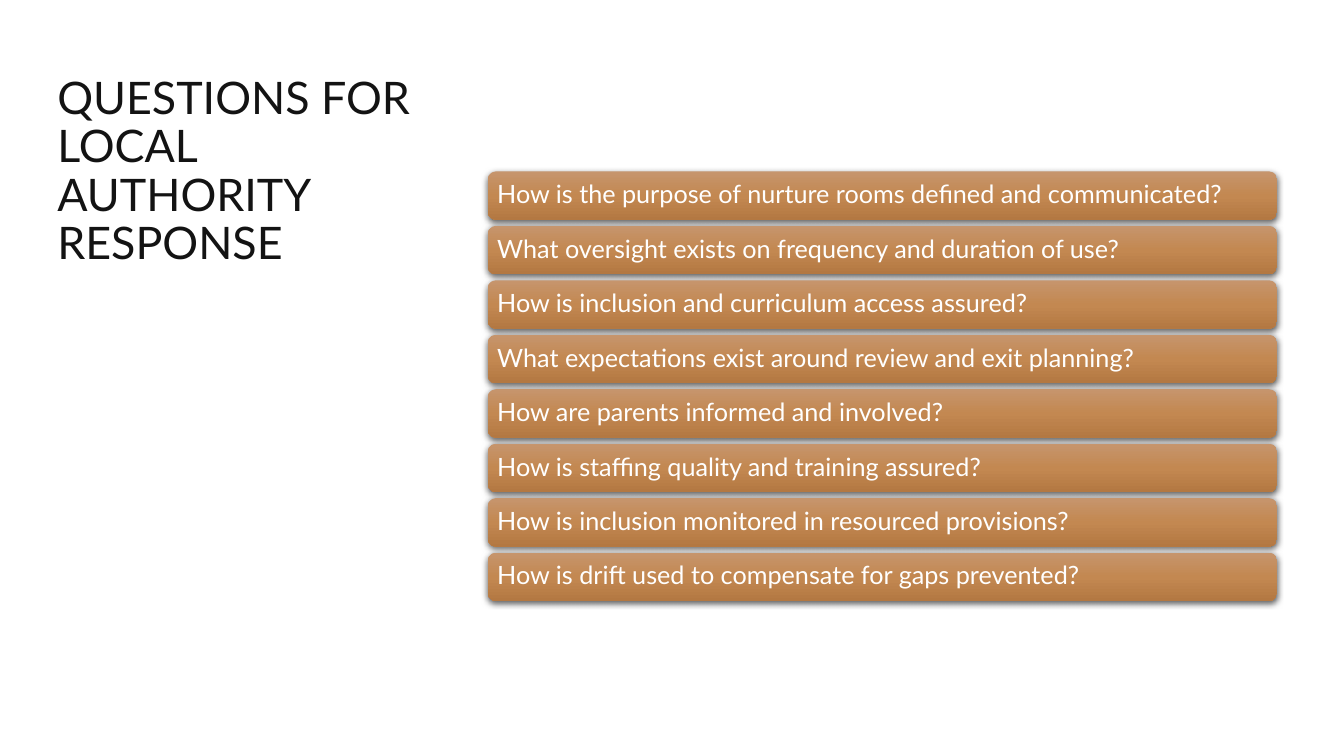
"""Build a slide listing questions for the local authority response."""
from dataclasses import dataclass

from lxml import etree
from pptx import Presentation
from pptx.dml.color import RGBColor
from pptx.enum.shapes import MSO_SHAPE
from pptx.enum.text import MSO_ANCHOR, PP_ALIGN
from pptx.oxml import parse_xml
from pptx.oxml.ns import nsdecls
from pptx.shapes.autoshape import Shape
from pptx.slide import Slide
from pptx.util import Pt

ROUNDED = MSO_SHAPE.ROUNDED_RECTANGLE
TOP, MIDDLE = MSO_ANCHOR.TOP, MSO_ANCHOR.MIDDLE
LEFT = PP_ALIGN.LEFT
FONT = "Lato"
TITLE = "QUESTIONS FOR LOCAL AUTHORITY RESPONSE"
QUESTIONS = (
    "How is the purpose of nurture rooms defined and communicated?",
    "What oversight exists on frequency and duration of use?",
    "How is inclusion and curriculum access assured?",
    "What expectations exist around review and exit planning?",
    "How are parents informed and involved?",
    "How is staffing quality and training assured?",
    "How is inclusion monitored in resourced provisions?",
    "How is drift used to compensate for gaps prevented?",
)
GRADIENT = ((0, "C6956D"), (50, "C38851"), (100, "B37842"))
BAR_TOP, BAR_PITCH = 122.4, 38.9


@dataclass(frozen=True)
class Box:
    left: float
    top: float
    width: float
    height: float

    def lengths(self) -> tuple[Pt, Pt, Pt, Pt]:
        return Pt(self.left), Pt(self.top), Pt(self.width), Pt(self.height)


@dataclass(frozen=True)
class TextStyle:
    size: float
    color: str
    anchor: MSO_ANCHOR
    inset_x: float
    inset_y: float


TITLE_STYLE = TextStyle(32, "131313", TOP, 7.2, 3.6)
BAR_STYLE = TextStyle(18, "FFFFFF", MIDDLE, 5.04, 5.04)


def rgb(color: str) -> RGBColor:
    return RGBColor.from_string(color)


def write(sp: Shape, text: str, style: TextStyle) -> None:
    tf = sp.text_frame
    tf.word_wrap = True
    tf.vertical_anchor = style.anchor
    tf.margin_left = tf.margin_right = Pt(style.inset_x)
    tf.margin_top = tf.margin_bottom = Pt(style.inset_y)
    p = tf.paragraphs[0]
    p.text = text
    p.alignment = LEFT
    p.line_spacing = 0.9
    p.font.name = FONT
    p.font.size = Pt(style.size)
    p.font.color.rgb = rgb(style.color)


def gradient_fill() -> etree.ElementBase:
    stops = "".join(
        f'<a:gs pos="{pos * 1000}"><a:srgbClr val="{color}"/></a:gs>'
        for pos, color in GRADIENT
    )
    return parse_xml(
        f'<a:gradFill {nsdecls("a")} rotWithShape="1"><a:gsLst>{stops}</a:gsLst>'
        '<a:lin ang="5400000" scaled="0"/></a:gradFill>'
    )


def drop_shadow() -> etree.ElementBase:
    return parse_xml(
        f'<a:effectLst {nsdecls("a")}><a:outerShdw blurRad="{Pt(4.5)}" '
        f'dist="{Pt(1.5)}" dir="5400000" algn="ctr" rotWithShape="0">'
        '<a:srgbClr val="000000"><a:alpha val="63000"/></a:srgbClr>'
        "</a:outerShdw></a:effectLst>"
    )


def add_title(s: Slide, text: str, box: Box) -> None:
    write(s.shapes.add_textbox(*box.lengths()), text, TITLE_STYLE)


def add_bar(s: Slide, text: str, box: Box) -> None:
    sp = s.shapes.add_shape(ROUNDED, *box.lengths())
    sp.line.fill.background()
    ln = sp.line._ln
    ln.addprevious(gradient_fill())
    ln.addnext(drop_shadow())
    write(sp, text, BAR_STYLE)


def main() -> None:
    prs = Presentation()
    prs.slide_width, prs.slide_height = Pt(960), Pt(540)
    s = prs.slides.add_slide(prs.slide_layouts[6])
    add_title(s, TITLE, Box(33.84, 50.4, 275.04, 285.12))
    for i, question in enumerate(QUESTIONS):
        add_bar(s, question, Box(348.48, BAR_TOP + i * BAR_PITCH, 563.76, 34.6))
    prs.save("out.pptx")


if __name__ == "__main__":
    main()
